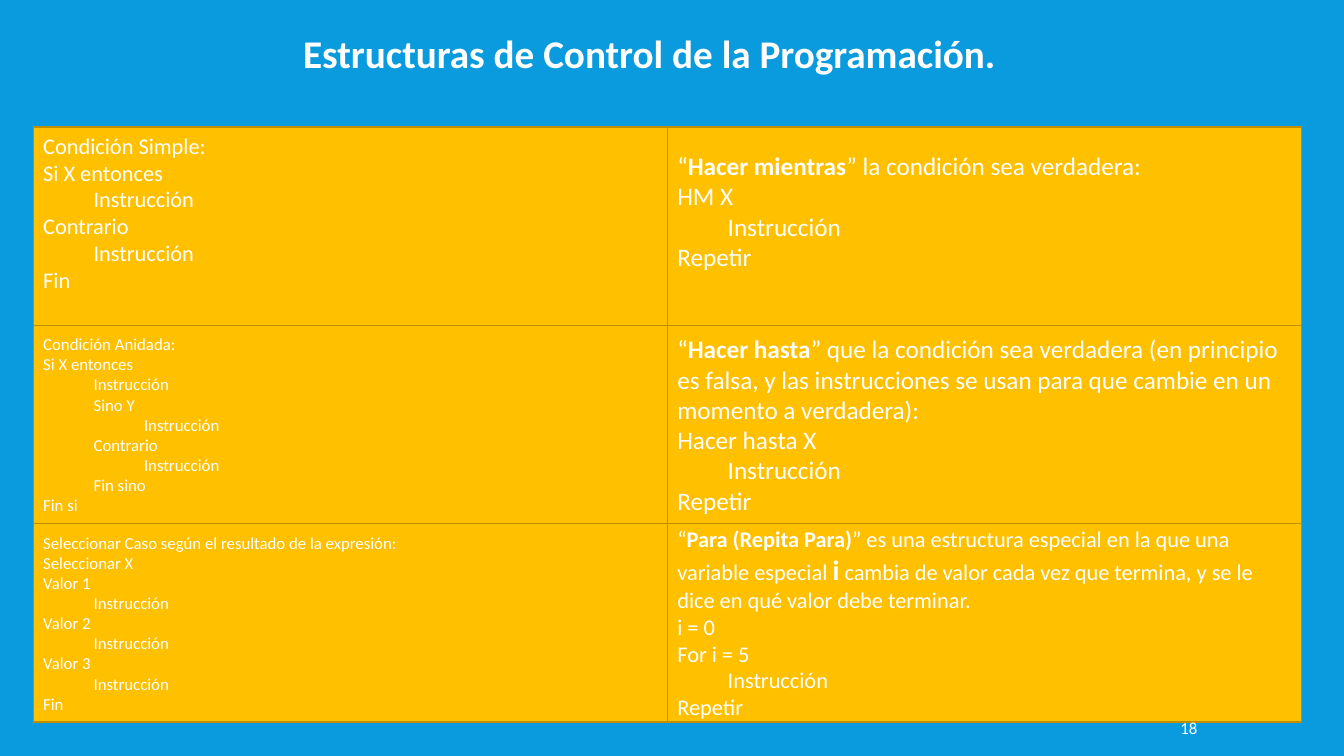
from pptx import Presentation
from pptx.dml.color import RGBColor
from pptx.enum.shapes import MSO_SHAPE
from pptx.enum.text import MSO_ANCHOR, PP_ALIGN
from pptx.util import Cm, Pt


def color(value):
    return RGBColor.from_string(value)


def style(p, size):
    p.font.name = "Calibri"
    p.font.size = Pt(size)
    p.font.color.rgb = color("FFFFFF")
    p.alignment = PP_ALIGN.LEFT


prs = Presentation()
prs.slide_width, prs.slide_height = Cm(33.87), Cm(19.05)
s = prs.slides.add_slide(prs.slide_layouts[6])
s.background.fill.solid()
s.background.fill.fore_color.rgb = color("099BDD")

title = s.shapes.add_textbox(Cm(7.39), Cm(0.61), Cm(18.87), Cm(1.45))
p = title.text_frame.paragraphs[0]
p.text = "Estructuras de Control de la Programación."
style(p, 28)
p.font.bold = True

# Each cell: size, bottom inset, lines of (indent level, text split at *bold*)
cells = [
    (16, 0.82, [
        (0, "Condición Simple:"),
        (0, "Si X entonces"),
        (1, "Instrucción"),
        (0, "Contrario"),
        (1, "Instrucción"),
        (0, "Fin"),
    ]),
    (18, 0.9, [
        (0, "“*Hacer mientras*” la condición sea verdadera:"),
        (0, "HM X"),
        (1, "Instrucción"),
        (0, "Repetir"),
    ]),
    (12, 0.13, [
        (0, "Condición Anidada:"),
        (0, "Si X entonces"),
        (1, "Instrucción"),
        (1, "Sino Y"),
        (2, "Instrucción"),
        (1, "Contrario"),
        (2, "Instrucción"),
        (1, "Fin sino"),
        (0, "Fin si"),
    ]),
    (18, 0.13, [
        (0, "“*Hacer hasta*” que la condición sea verdadera (en principio es falsa, "
            "y las instrucciones se usan para que cambie en un momento a verdadera):"),
        (0, "Hacer hasta X"),
        (1, "Instrucción"),
        (0, "Repetir"),
    ]),
    (12, 0.13, [
        (0, "Seleccionar Caso según el resultado de la expresión:"),
        (0, "Seleccionar X"),
        (0, "Valor 1"),
        (1, "Instrucción"),
        (0, "Valor 2"),
        (1, "Instrucción"),
        (0, "Valor 3"),
        (1, "Instrucción"),
        (0, "Fin"),
    ]),
    (16, 0.13, [
        (0, "“*Para (Repita Para)*” es una estructura especial en la que una variable "
            "especial *i* cambia de valor cada vez que termina, y se le dice en qué "
            "valor debe terminar."),
        (0, "i = 0"),
        (0, "For i = 5"),
        (1, "Instrucción"),
        (0, "Repetir"),
    ]),
]

width, height = 15.98, 5
for i, (size, bottom, lines) in enumerate(cells):
    row, col = divmod(i, 2)
    sp = s.shapes.add_shape(MSO_SHAPE.RECTANGLE, Cm(0.84 + col * width),
                            Cm(3.2 + row * height), Cm(width), Cm(height))
    sp.shadow.inherit = False
    sp.fill.solid()
    sp.fill.fore_color.rgb = color("FFC000")
    sp.line.color.rgb = color("BD8E00")
    sp.line.width = Pt(1)
    tf = sp.text_frame
    tf.word_wrap = True
    tf.vertical_anchor = MSO_ANCHOR.MIDDLE
    tf.margin_bottom = Cm(bottom)
    for n, (level, text) in enumerate(lines):
        p = tf.add_paragraph() if n else tf.paragraphs[0]
        style(p, size)
        p._p.get_or_add_pPr().set("marL", str(Cm(1.27 * level)))
        for k, part in enumerate(text.split("*")):
            r = p.add_run()
            r.text = part
            if k % 2:
                r.font.bold = True
            if part == "i":
                r.font.size = Pt(20)

number = s.shapes.add_textbox(Cm(29.62), Cm(17.83), Cm(2.62), Cm(1.02))
tf = number.text_frame
tf.word_wrap = True
tf.vertical_anchor = MSO_ANCHOR.MIDDLE
tf.margin_left = Cm(0.13)
p = tf.paragraphs[0]
p.text = "18"
style(p, 12)

prs.save("out.pptx")
